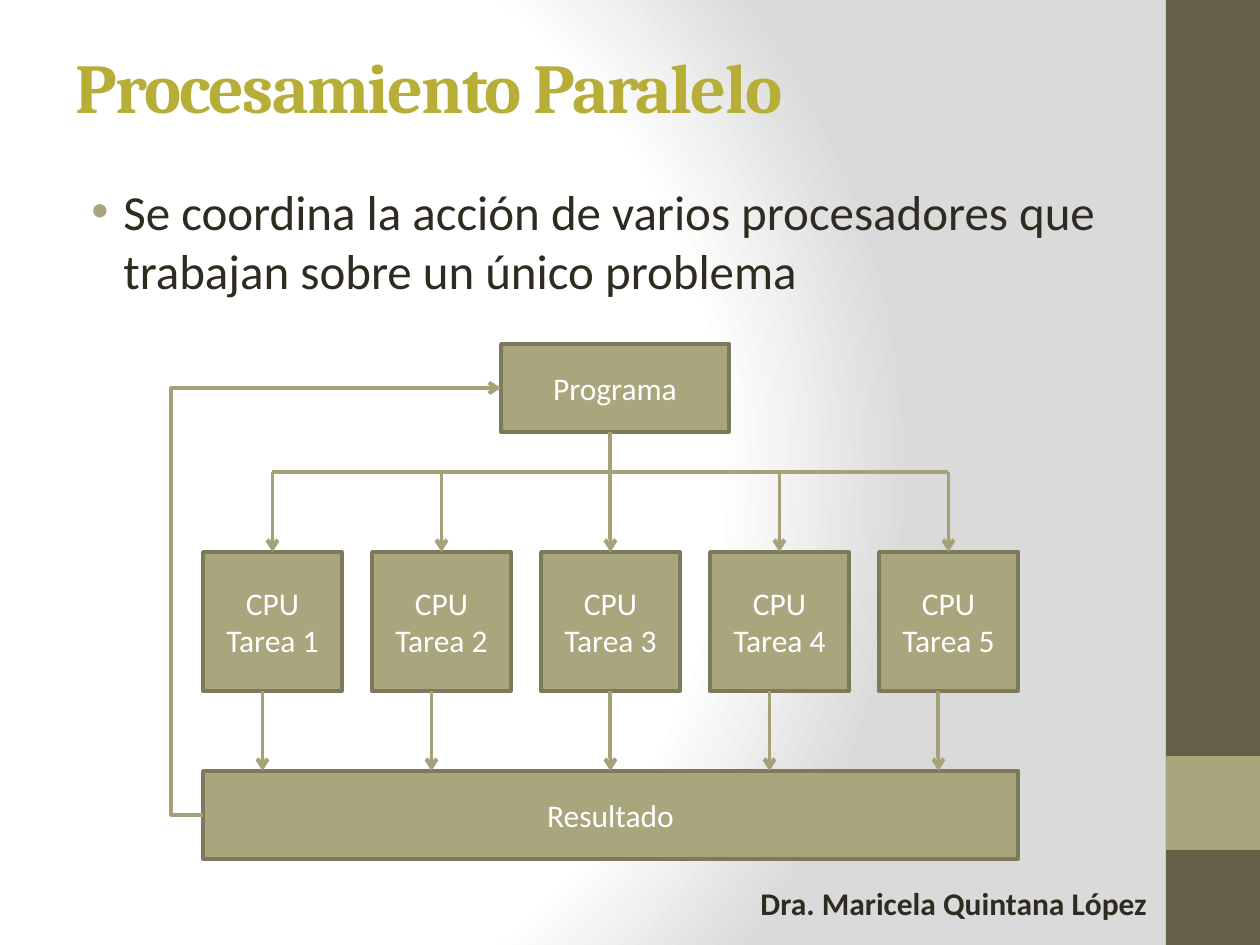
"""Builds the slide on parallel processing with its program, CPU and result diagram."""
from dataclasses import dataclass

from lxml import etree
from pptx import Presentation
from pptx.dml.color import RGBColor
from pptx.enum.shapes import MSO_CONNECTOR, MSO_SHAPE
from pptx.enum.text import MSO_ANCHOR, MSO_AUTO_SIZE, PP_ALIGN
from pptx.oxml import parse_xml
from pptx.oxml.ns import nsdecls, qn
from pptx.util import Pt

RECT = MSO_SHAPE.RECTANGLE
STRAIGHT, ELBOW = MSO_CONNECTOR.STRAIGHT, MSO_CONNECTOR.ELBOW
MIDDLE, CENTER = MSO_ANCHOR.MIDDLE, PP_ALIGN.CENTER
TOP, LEFT, BOTTOM = 0, 1, 2
PX = 914400 / 126


@dataclass(frozen=True)
class Theme:
    heading: str = "Cambria"
    body: str = "Calibri"
    text: str = "2F2B20"
    title: str = "B7AE38"
    band: str = "675E47"
    accent: str = "A9A57C"
    border: str = "7D7A5C"
    arrow: str = "A6A278"
    white: str = "FFFFFF"
    shade: str = "DADADA"
    title_size: int = 40
    body_size: int = 28
    label_size: int = 18


T = Theme()
TITLE = "Procesamiento Paralelo"
BODY = "Se coordina la acción de varios procesadores que trabajan sobre un único problema"
AUTHOR = "Dra. Maricela Quintana López"
PROGRAM, RESULT = ["Programa"], ["Resultado"]
TASKS = [["CPU", f"Tarea {n}"] for n in range(1, 6)]

SIDEBAR = [((1166, 0, 94, 945), T.band), ((1166, 756, 94, 94), T.accent)]
CPU_X, CPU_Y, CPU_SIZE, CPU_PITCH = 203, 552, 139, 169
PROGRAM_BOX = (501, 344, 228, 88)
RESULT_Y, RESULT_H = 771, 88
BUS_Y, OUTPUT_SHIFT = 472, 10


def emu(*lengths):
    return [round(v * PX) for v in lengths]


def add_run(p, text, size, color, font=T.body, bold=False):
    r = p.add_run()
    r.text = text
    r.font.name, r.font.size, r.font.bold = font, Pt(size), bold
    r.font.color.rgb = RGBColor.from_string(color)
    return r


def add_text(s, box, wrap=True):
    tf = s.shapes.add_textbox(*emu(*box)).text_frame
    tf.word_wrap = wrap
    return tf


def add_rect(s, box, fill, border=None, lines=()):
    sp = s.shapes.add_shape(RECT, *emu(*box))
    sp.shadow.inherit = False
    sp.fill.solid()
    sp.fill.fore_color.rgb = RGBColor.from_string(fill)
    if border:
        sp.line.color.rgb = RGBColor.from_string(border)
        sp.line.width = Pt(2)
    else:
        sp.line.fill.background()
    tf = sp.text_frame
    tf.vertical_anchor = MIDDLE
    for i, line in enumerate(lines):
        p = tf.add_paragraph() if i else tf.paragraphs[0]
        p.alignment = CENTER
        add_run(p, line, T.label_size, T.white)
    return sp


def add_line(s, start, end, kind=STRAIGHT, begin=None, finish=None, arrow=True):
    c = s.shapes.add_connector(kind, *emu(*start, *end))
    c.line.color.rgb = RGBColor.from_string(T.arrow)
    c.line.width = Pt(2.25)
    if begin:
        c.begin_connect(*begin)
    if finish:
        c.end_connect(*finish)
    if arrow:
        etree.SubElement(c.line._get_or_add_ln(), qn("a:tailEnd"), type="arrow")
    etree.SubElement(c._element.spPr, qn("a:effectLst"))
    return c


def add_background(s):
    s.background.fill.solid()
    solid = s.element.find(".//" + qn("p:bgPr")).find(qn("a:solidFill"))
    stops = "".join(
        f'<a:gs pos="{pos}000"><a:srgbClr val="{color}"/></a:gs>'
        for pos, color in ((0, T.white), (75, T.white), (100, T.shade)))
    solid.getparent().replace(solid, parse_xml(
        f'<a:gradFill {nsdecls("a")} rotWithShape="1"><a:gsLst>{stops}</a:gsLst>'
        '<a:path path="circle"><a:fillToRect l="20000" t="50000" r="100000" b="50000"/>'
        "</a:path></a:gradFill>"))


def add_texts(s):
    tf = add_text(s, (748, 878, 422, 51), wrap=False)
    tf.auto_size = MSO_AUTO_SIZE.SHAPE_TO_FIT_TEXT
    add_run(tf.paragraphs[0], AUTHOR, T.label_size, T.text, bold=True)

    tf = add_text(s, (63, 6, 1050, 158))
    tf.vertical_anchor = MIDDLE
    r = add_run(tf.paragraphs[0], TITLE, T.title_size, T.title, T.heading, True)
    r._r.get_or_add_rPr().set("spc", "-100")

    p = add_text(s, (63, 175, 1050, 707)).paragraphs[0]
    p.space_before = Pt(6)
    pPr = p._p.get_or_add_pPr()
    margin, indent = emu(48, -32)
    pPr.set("marL", str(margin))
    pPr.set("indent", str(indent))
    color = etree.SubElement(pPr, qn("a:buClr"))
    etree.SubElement(color, qn("a:srgbClr"), val=T.accent)
    etree.SubElement(pPr, qn("a:buFont"), typeface="Arial")
    etree.SubElement(pPr, qn("a:buChar"), char="•")
    add_run(p, BODY, T.body_size, T.text)


def add_diagram(s):
    lefts = [CPU_X + i * CPU_PITCH for i in range(len(TASKS))]
    centers = [x + CPU_SIZE / 2 for x in lefts]
    middle = len(TASKS) // 2
    cpu_bottom = CPU_Y + CPU_SIZE
    px, py, _, ph = PROGRAM_BOX
    result_box = (CPU_X, RESULT_Y, lefts[-1] + CPU_SIZE - CPU_X, RESULT_H)

    program = add_rect(s, PROGRAM_BOX, T.accent, T.border, PROGRAM)
    result = add_rect(s, result_box, T.accent, T.border, RESULT)
    for i, (x, center, lines) in enumerate(zip(lefts, centers, TASKS)):
        cpu = add_rect(s, (x, CPU_Y, CPU_SIZE, CPU_SIZE), T.accent, T.border, lines)
        start_y = py + ph if i == middle else BUS_Y
        add_line(s, (center, start_y), (center, CPU_Y), finish=(cpu, TOP))
        if i == middle:
            add_line(s, (center, cpu_bottom), (center, RESULT_Y),
                     begin=(cpu, BOTTOM), finish=(result, TOP))
        else:
            out_x = center - OUTPUT_SHIFT
            add_line(s, (out_x, cpu_bottom), (out_x, RESULT_Y))
    add_line(s, (centers[0], BUS_Y), (centers[-1], BUS_Y), arrow=False)

    loop = add_line(s, (CPU_X, RESULT_Y + RESULT_H / 2), (px, py + ph / 2), ELBOW,
                    begin=(result, LEFT), finish=(program, LEFT))
    guides = loop._element.spPr.find(qn("a:prstGeom")).find(qn("a:avLst"))
    etree.SubElement(guides, qn("a:gd"), name="adj1", fmla="val -10600")


def main():
    prs = Presentation()
    prs.slide_width, prs.slide_height = emu(1260, 945)
    s = prs.slides.add_slide(prs.slide_layouts[6])
    add_background(s)
    for box, fill in SIDEBAR:
        add_rect(s, box, fill)
    add_texts(s)
    add_diagram(s)
    prs.save("out.pptx")


if __name__ == "__main__":
    main()
